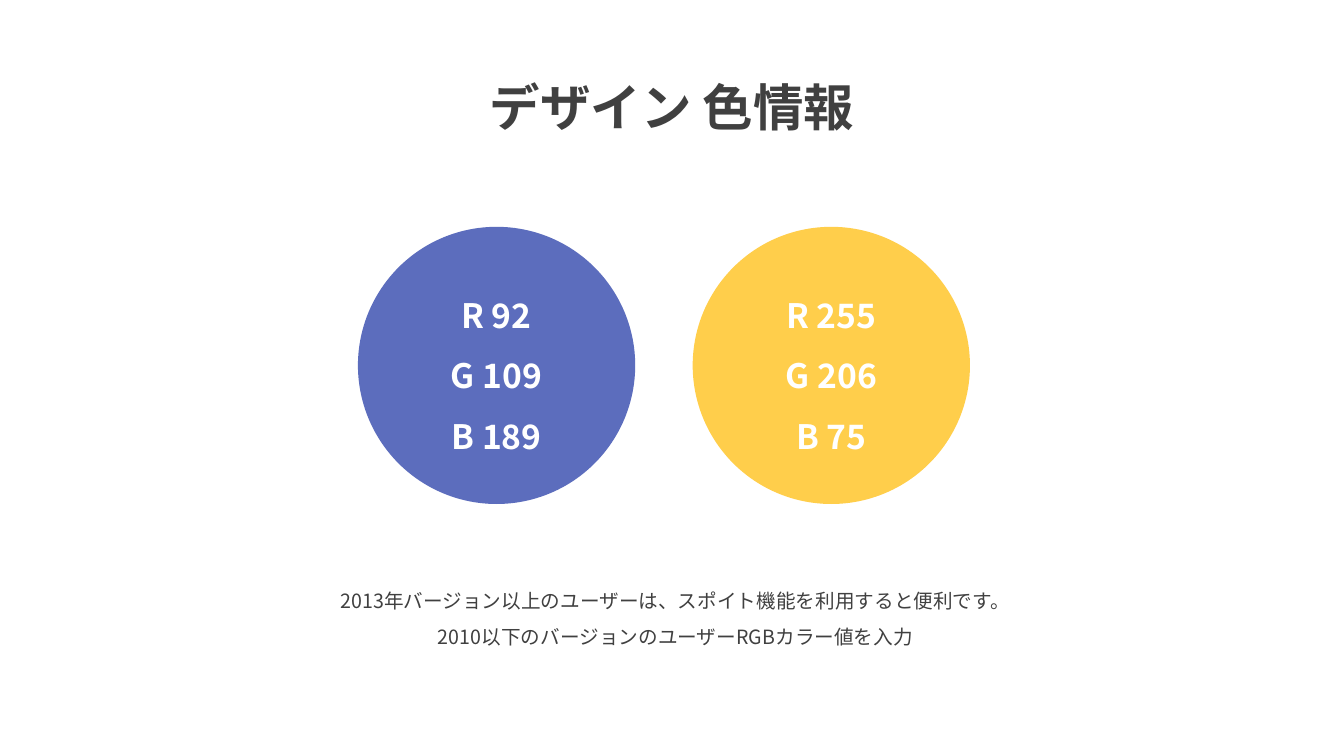
from dataclasses import dataclass

from lxml.etree import SubElement
from pptx import Presentation
from pptx.dml.color import RGBColor as Rgb
from pptx.enum.shapes import MSO_SHAPE as Shape
from pptx.enum.text import MSO_ANCHOR as Anchor, MSO_AUTO_SIZE as Fit, PP_ALIGN as Align
from pptx.oxml.ns import qn
from pptx.slide import Slide
from pptx.text.text import TextFrame
from pptx.util import Inches, Pt


@dataclass(frozen=True)
class Theme:
    font: str = "Noto Sans CJK KR"
    dark: Rgb = Rgb(64, 64, 64)
    white: Rgb = Rgb(255, 255, 255)
    title: int = 36
    label: int = 24
    note: int = 14
    space: float = 1.5


@dataclass(frozen=True)
class Swatch:
    left: float
    red: int
    green: int
    blue: int


THEME = Theme()
TOP, SIZE = 2.25, 2.75
SWATCHES = [Swatch(6.87, 255, 206, 75), Swatch(3.55, 92, 109, 189)]
NOTES = [
    "2013年バージョン以上のユーザーは、スポイト機能を利用すると便利です。",
    "2010以下のバージョンのユーザーRGBカラー値を入力",
]


def write(frame: TextFrame, lines: list[str], *, size: int, color: Rgb,
          bold: bool = False, anchor: Anchor = Anchor.TOP, fit: Fit = Fit.NONE) -> None:
    """Fill a frame with centred lines in one format."""
    frame.word_wrap = True
    frame.auto_size = fit
    frame.vertical_anchor = anchor
    for i, line in enumerate(lines):
        para = frame.paragraphs[0] if i == 0 else frame.add_paragraph()
        para.alignment = Align.CENTER
        para.line_spacing = THEME.space
        run = para.add_run()
        run.text = line
        font = run.font
        font.size, font.bold, font.name = Pt(size), bold, THEME.font
        font.color.rgb = color
        # East Asian glyphs take their own typeface entry
        SubElement(run._r.get_or_add_rPr(), qn("a:ea"), typeface=THEME.font)


def draw(slide: Slide, item: Swatch) -> None:
    """Draw a circle labelled with its own colour values."""
    disc = slide.shapes.add_shape(
        Shape.OVAL, Inches(item.left), Inches(TOP), Inches(SIZE), Inches(SIZE))
    disc.shadow.inherit = False
    disc.fill.solid()
    disc.fill.fore_color.rgb = Rgb(item.red, item.green, item.blue)
    disc.line.fill.background()
    lines = [f"R {item.red}", f"G {item.green}", f"B {item.blue}"]
    write(disc.text_frame, lines, size=THEME.label, color=THEME.white,
          bold=True, anchor=Anchor.MIDDLE)


def main() -> None:
    deck = Presentation()
    deck.slide_width, deck.slide_height = Inches(13.33), Inches(7.5)
    slide = deck.slides.add_slide(deck.slide_layouts[5])

    # Title
    title = slide.shapes.title
    title.left, title.top = Inches(4.24), Inches(0.4)
    title.width, title.height = Inches(4.85), Inches(0.91)
    write(title.text_frame, ["デザイン 色情報"], size=THEME.title,
          color=THEME.dark, bold=True, fit=Fit.SHAPE_TO_FIT_TEXT)

    # Colour circles
    for item in SWATCHES:
        draw(slide, item)

    # Notes
    note = slide.shapes.add_textbox(
        Inches(2.52), Inches(5.68), Inches(8.36), Inches(0.77))
    write(note.text_frame, NOTES, size=THEME.note, color=THEME.dark,
          fit=Fit.SHAPE_TO_FIT_TEXT)

    deck.save("out.pptx")


if __name__ == "__main__":
    main()
